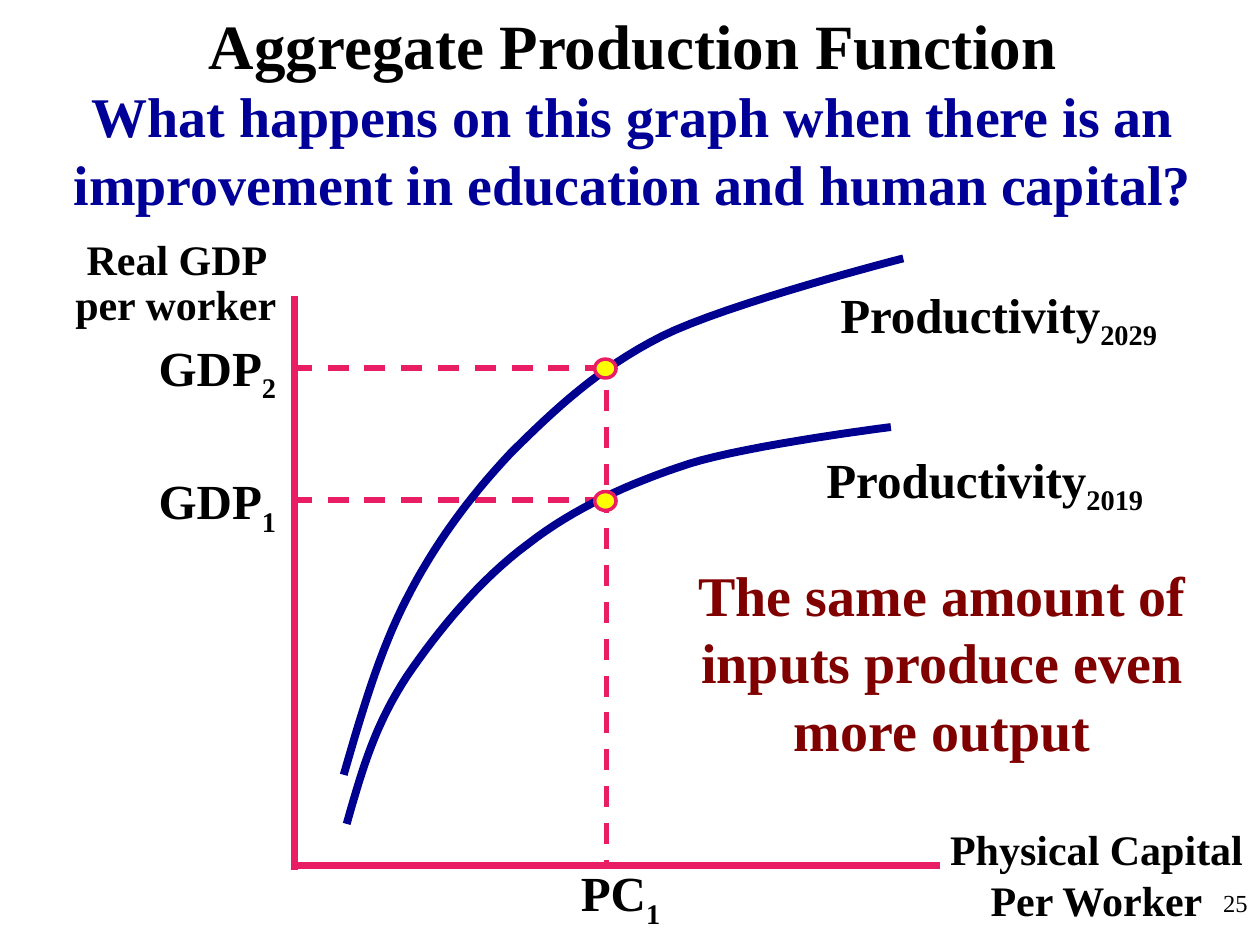
import pptx
import pptx.dml.color
import pptx.enum.dml
import pptx.enum.shapes
import pptx.enum.text
import pptx.oxml.ns
import pptx.util
from lxml import etree

Cm = pptx.util.Cm
Pt = pptx.util.Pt
color = pptx.dml.color.RGBColor.from_string
ALIGN = pptx.enum.text.PP_ALIGN
FONT = "Times New Roman"
BLACK, PINK, NAVY, MAROON, YELLOW = "000000", "E91D63", "000090", "800000", "FFFF00"


def add_span(para, text, size, ink=BLACK, bold=True, subscript=False):
    span = para.add_run()
    span.text = text
    span.font.name = FONT
    span.font.size = Pt(size)
    span.font.bold = bold
    span.font.color.rgb = color(ink)
    if subscript:
        span._r.get_or_add_rPr().set("baseline", "-25000")


def add_label(left, top, width, height, align):
    """Add an empty wrapping text box and return its paragraph."""
    box = page.shapes.add_textbox(Cm(left), Cm(top), Cm(width), Cm(height))
    box.text_frame.word_wrap = True
    para = box.text_frame.paragraphs[0]
    para.alignment = align
    return para


deck = pptx.Presentation()
deck.slide_width, deck.slide_height = Cm(25.4), Cm(19.05)
page = deck.slides.add_slide(deck.slide_layouts[5])

# Title and question
title = page.shapes.title
title.left, title.top, title.width, title.height = Cm(0.1), Cm(0), Cm(25.32), Cm(5.79)
frame = title.text_frame
frame.word_wrap = True
frame.auto_size = pptx.enum.text.MSO_AUTO_SIZE.NONE
frame.vertical_anchor = pptx.enum.text.MSO_ANCHOR.TOP
heading = frame.paragraphs[0]
question = frame.add_paragraph()
heading.alignment = question.alignment = ALIGN.CENTER
add_span(heading, "Aggregate Production Function", 36)
add_span(question, "What happens on this graph when there is an improvement "
         "in education and human capital?", 32, "000099")

# Axes and dashed guides
axis_x, axis_y = 5.94, 17.45
capital_x, gdp1_y, gdp2_y = 12.22, 10.08, 7.42
for x1, y1, x2, y2, weight, dashed in [
    (axis_x, 5.97, axis_x, 17.53, 4, False),
    (5.87, axis_y, 18.95, axis_y, 4, False),
    (capital_x, 9.91, capital_x, axis_y, 3, True),
    (capital_x, gdp2_y, axis_x, gdp2_y, 3, True),
    (capital_x, gdp1_y, axis_x, gdp1_y, 3, True),
    (capital_x, 7.87, capital_x, 10.01, 3, True),
]:
    rule = page.shapes.add_connector(
        pptx.enum.shapes.MSO_CONNECTOR.STRAIGHT, Cm(x1), Cm(y1), Cm(x2), Cm(y2))
    rule.line.color.rgb = color(PINK)
    rule.line.width = Pt(weight)
    if dashed:
        rule.line.dash_style = pptx.enum.dml.MSO_LINE.DASH
    etree.SubElement(rule._element.spPr, pptx.oxml.ns.qn("a:effectLst"))

# Productivity curves: cubic Bezier chains, sampled into short segments
curve_2019 = [
    (6.99, 16.61), (7.34, 15.37), (7.59, 14.58), (8.2, 13.64), (8.84, 12.7),
    (9.68, 11.68), (10.64, 10.97), (11.58, 10.24), (12.67, 9.75), (13.89, 9.35),
    (15.11, 8.97), (17.96, 8.61), (17.96, 8.61)]
curve_2029 = [
    (6.93, 15.62), (7.29, 14.38), (7.65, 13.13), (8.2, 12.07), (8.76, 10.97),
    (9.47, 10.01), (10.31, 9.12), (11.18, 8.26), (12.04, 7.44), (13.34, 6.78),
    (14.66, 6.12), (18.21, 5.21), (18.21, 5.21)]
steps = 16
for controls in (curve_2019, curve_2029):
    points = []
    for start in range(0, len(controls) - 1, 3):
        for step in range(1, steps + 1):
            t = step / steps
            weights = ((1 - t) ** 3, 3 * t * (1 - t) ** 2, 3 * t * t * (1 - t), t ** 3)
            points.append(tuple(
                Cm(sum(w * p[i] for w, p in zip(weights, controls[start:start + 4])))
                for i in (0, 1)))
    first_x, first_y = controls[0]
    builder = page.shapes.build_freeform(Cm(first_x), Cm(first_y))
    builder.add_line_segments(points, close=False)
    curve = builder.convert_to_shape()
    curve.shadow.inherit = False
    curve.fill.background()
    curve.line.color.rgb = color(NAVY)
    curve.line.width = Pt(4.5)

# Points where the curves meet the capital level
for top in (7.24, 9.91):
    dot = page.shapes.add_shape(
        pptx.enum.shapes.MSO_SHAPE.FLOWCHART_CONNECTOR,
        Cm(11.99), Cm(top), Cm(0.43), Cm(0.38))
    dot.shadow.inherit = False
    dot.fill.solid()
    dot.fill.fore_color.rgb = color(YELLOW)
    dot.line.color.rgb = color(PINK)
    dot.line.width = Pt(2)

# Labels with subscripts
for text, index, left, top, width in [
    ("GDP", "2", 2.95, 6.68, 2.92),
    ("GDP", "1", 2.95, 9.37, 2.92),
    ("Productivity", "2029", 16.69, 5.61, 7.42),
    ("Productivity", "2019", 16.41, 8.94, 7.42),
    ("PC", "1", 11.46, 17.27, 2.29),
]:
    para = add_label(left, top, width, 1.45, ALIGN.LEFT)
    add_span(para, text, 28)
    add_span(para, index, 28, subscript=True)

# Axis titles, conclusion and page number
para = add_label(1.17, 4.7, 4.75, 2.11, ALIGN.CENTER)
para.line_spacing = 0.9
add_span(para, "Real GDP per worker", 24)
para = add_label(18.75, 16.48, 6.71, 1.27, ALIGN.CENTER)
add_span(para, "Physical Capital Per Worker", 24)
para = add_label(13.46, 11.18, 11.07, 1.45, ALIGN.CENTER)
add_span(para, "The same amount of inputs produce even more output", 32, MAROON)
para = add_label(20.12, 17.78, 5.28, 1.27, ALIGN.RIGHT)
add_span(para, "25", 14, bold=False)

deck.save("out.pptx")
